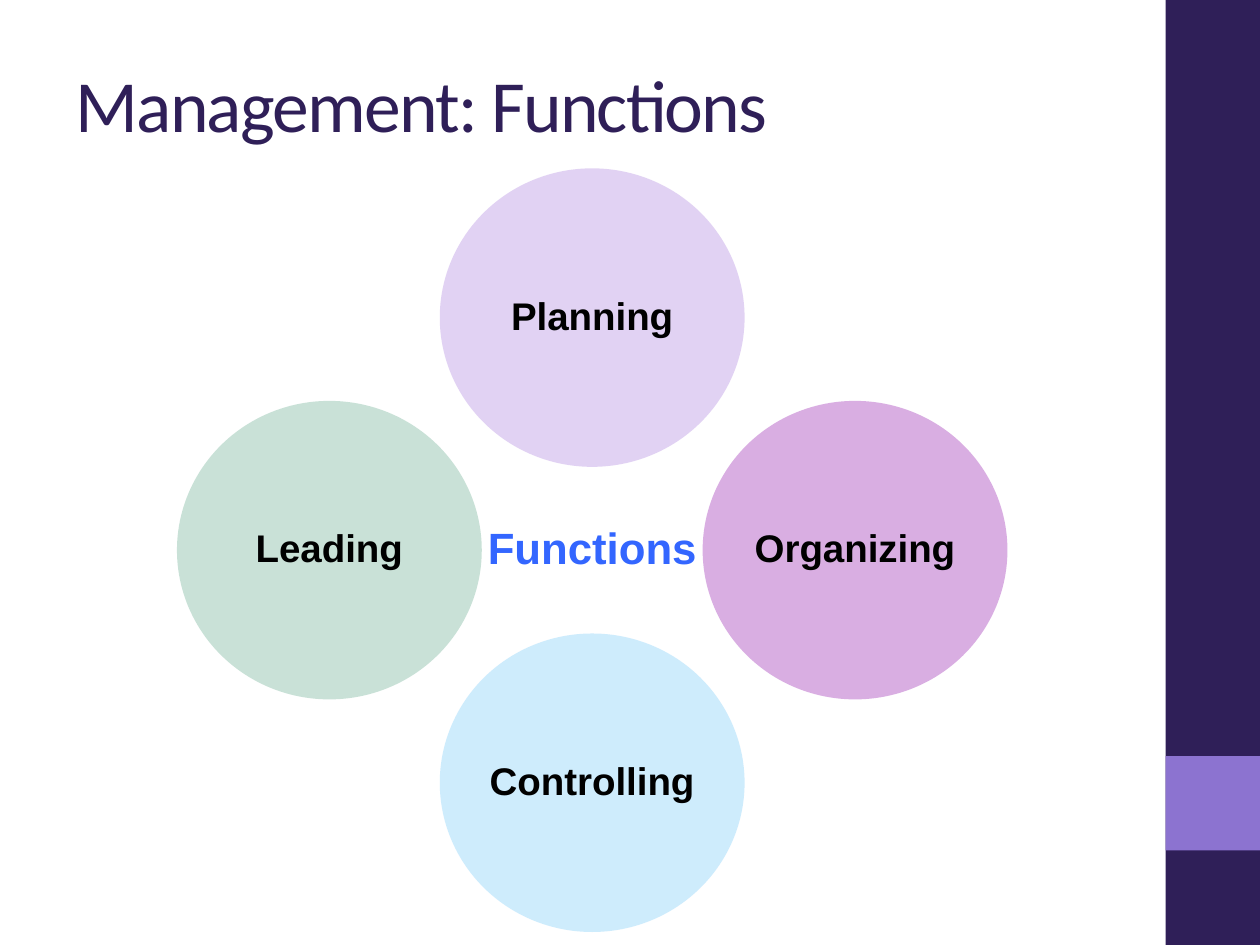
from lxml import etree
from pptx import Presentation
from pptx.dml.color import RGBColor
from pptx.enum import shapes, text
from pptx.oxml import ns
from pptx.util import Pt

NAVY = "2F1F58"
MID_X, MID_Y = 338.4, 314.4
STEP_X, STEP_Y = 150.2, 132.9
WIDE, HIGH = 174.2, 170.6
RING = [
    ("Planning", 0, -1, "C5A6E8"),
    ("Organizing", 1, 0, "B45EC7"),
    ("Controlling", 0, 1, "9FDAFB"),
    ("Leading", -1, 0, "95C5B0"),
]


def tint(color, code):
    color.rgb = RGBColor.from_string(code)


def shape(slide, kind, box, code, alpha=None):
    item = slide.shapes.add_shape(kind, *map(Pt, box))
    item.shadow.inherit = False
    item.line.fill.background()
    item.fill.solid()
    tint(item.fill.fore_color, code)
    if alpha:
        fill = item.fill._xPr.find(ns.qn("a:solidFill"))
        etree.SubElement(fill[0], ns.qn("a:alpha"), val=str(alpha * 1000))
    return item


def write(item, words, face, size, code, bold=False, pad=2.2):
    frame = item.text_frame
    frame.word_wrap = True
    frame.vertical_anchor = text.MSO_ANCHOR.MIDDLE
    frame.margin_left = frame.margin_right = Pt(pad)
    frame.margin_top = frame.margin_bottom = Pt(pad)
    para = frame.paragraphs[0]
    para.text = words
    para.font.name = face
    para.font.size = Pt(size)
    para.font.bold = bold
    tint(para.font.color, code)
    return para


def center(para):
    para.alignment = text.PP_ALIGN.CENTER
    para.line_spacing = 0.9


def title(slide, words):
    box = slide.shapes.add_textbox(Pt(36), Pt(13.7), Pt(600), Pt(90))
    para = write(box, words, "Calibri", 42, NAVY, pad=7.2)
    para.runs[0].font._element.set("spc", "-100")


def hub(slide, words):
    wide, high = 124.6, 133.9
    box = slide.shapes.add_textbox(
        Pt(MID_X - wide / 2), Pt(MID_Y - high / 2), Pt(wide), Pt(high))
    center(write(box, words, "Arial", 25, "3366FF", True))
    box.text_frame.word_wrap = False


def disc(slide, words, col, row, code):
    left = MID_X + col * STEP_X - WIDE / 2
    top = MID_Y + row * STEP_Y - HIGH / 2
    oval = shape(slide, shapes.MSO_SHAPE.OVAL, (left, top, WIDE, HIGH), code, 50)
    center(write(oval, words, "Arial", 22, "000000", True))


def main():
    deck = Presentation()
    deck.slide_width, deck.slide_height = Pt(720), Pt(540)
    slide = deck.slides.add_slide(deck.slide_layouts[6])
    rect = shapes.MSO_SHAPE.RECTANGLE
    shape(slide, rect, (666, 0, 54, 540), NAVY)
    shape(slide, rect, (666, 432, 54, 54), "8C73D0")
    title(slide, "Management: Functions")
    hub(slide, "Functions")
    for part in RING:
        disc(slide, *part)
    deck.save("out.pptx")


if __name__ == "__main__":
    main()
